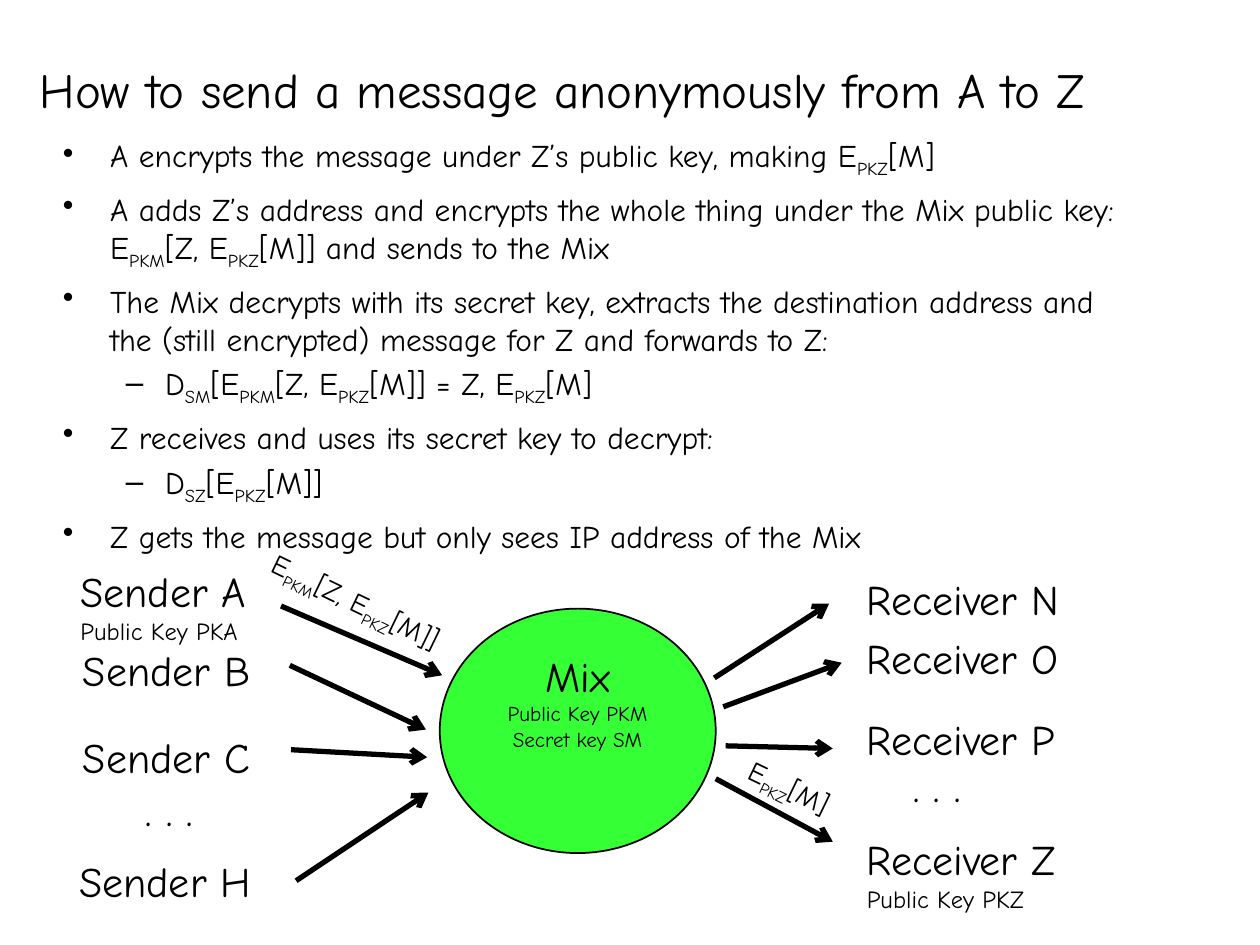
from dataclasses import dataclass

from lxml.etree import SubElement
from pptx import Presentation
from pptx.dml.color import RGBColor as RGB
from pptx.enum.shapes import MSO_CONNECTOR as CONN, MSO_SHAPE as SHAPE
from pptx.enum.text import MSO_ANCHOR as ANCHOR, MSO_AUTO_SIZE as AUTO, PP_ALIGN as ALIGN
from pptx.oxml.ns import qn
from pptx.util import Pt


@dataclass(frozen=True)
class Theme:
    font: str = "Comic Neue"
    ink: RGB = RGB(0x00, 0x00, 0x00)
    mix_fill: RGB = RGB(0x35, 0xFF, 0x35)
    title: int = 28
    body: int = 18
    node: int = 24
    cipher: int = 16
    key: int = 14
    mix_key: int = 12
    outline: float = 1
    arrow: float = 3


@dataclass(frozen=True)
class Level:
    margin: float
    hanging: float
    before: float
    bullet: str


@dataclass(frozen=True)
class Bullet:
    text: str
    level: int = 0


@dataclass(frozen=True)
class Label:
    text: str
    left: float
    top: float
    width: float
    height: float = 36
    size: int = 24
    key: str = ""
    rotation: float = 0
    wrap: bool = False


@dataclass(frozen=True)
class Arrow:
    x1: float
    y1: float
    x2: float
    y2: float


T = Theme()
LEVELS = (Level(27, 27, 6.3, "•"), Level(58.5, 22.5, 4, "–"))

# Text between tildes is set as subscript.
BULLETS = (
    Bullet("A encrypts the message under Z’s public key, making E~PKZ~[M]"),
    Bullet("A adds Z’s address and encrypts the whole thing under the Mix public key: "
           "E~PKM~[Z, E~PKZ~[M]] and sends to the Mix"),
    Bullet("The Mix decrypts with its secret key, extracts the destination address and "
           "the (still encrypted) message for Z and forwards to Z:"),
    Bullet("D~SM~[E~PKM~[Z, E~PKZ~[M]] = Z, E~PKZ~[M]", 1),
    Bullet("Z receives and uses its secret key to decrypt:"),
    Bullet("D~SZ~[E~PKZ~[M]]", 1),
    Bullet("Z gets the message but only sees IP address of the Mix"),
)

RECEIVER_X = 488.2
LABELS = (
    Label("Sender A", 38.9, 319.7, 121.7, 53.3, key="Public Key PKA"),
    Label("Sender B", 40.3, 365, 118.8),
    Label("Sender C", 40.3, 414.7, 118.1),
    Label(". . .", 76.3, 445, 46.8),
    Label("Sender H", 38.2, 485.3, 122.4),
    Label("Receiver N", RECEIVER_X, 324, 157.7, wrap=True),
    Label("Receiver O", RECEIVER_X, 357.8, 139),
    Label("Receiver P", RECEIVER_X, 403.9, 132.5),
    Label(". . .", 514.8, 431.3, 46.8),
    Label("Receiver Z", RECEIVER_X, 473, 136.1, 53.3, key="Public Key PKZ"),
    Label("E~PKM~[Z, E~PKZ~[M]]", 143.3, 334.1, 135.4, 26.6, T.cipher, rotation=25.8),
    Label(" E~PKZ~[M]", 414, 437, 75.6, 26.6, T.cipher, rotation=25.8),
)

ARROWS = (
    Arrow(160.6, 346.3, 252.7, 385.9),
    Arrow(165.6, 380.2, 243.4, 416.9),
    Arrow(166.3, 428.4, 244.1, 432.7),
    Arrow(169.2, 503.3, 244.8, 452.9),
    Arrow(408.2, 387.4, 473.8, 344.9),
    Arrow(413.3, 403.9, 481, 378.7),
    Arrow(414.7, 426.2, 475.9, 427.7),
    Arrow(409, 445, 475.9, 481),
)


def add_runs(p, text: str, size: int) -> None:
    for i, part in enumerate(text.split("~")):
        r = p.add_run()
        r.text = part
        r.font.name = T.font
        r.font.size = Pt(size)
        r.font.color.rgb = T.ink
        if i % 2:
            r.font._element.set("baseline", "-25000")


def add_box(s, left: float, top: float, width: float, height: float, wrap: bool = True):
    sp = s.shapes.add_textbox(Pt(left), Pt(top), Pt(width), Pt(height))
    sp.text_frame.word_wrap = wrap
    return sp


def add_title(s, text: str) -> None:
    tf = add_box(s, 15.8, 23.8, 679, 54).text_frame
    tf.vertical_anchor = ANCHOR.MIDDLE
    add_runs(tf.paragraphs[0], text, T.title)


def add_bullets(s, bullets: tuple[Bullet, ...]) -> None:
    tf = add_box(s, 28.8, 74.2, 617.8, 247.7).text_frame
    for i, bullet in enumerate(bullets):
        p = tf.add_paragraph() if i else tf.paragraphs[0]
        level = LEVELS[bullet.level]
        p.level = bullet.level
        p.space_before = Pt(level.before)
        pPr = p._p.get_or_add_pPr()
        pPr.set("marL", str(Pt(level.margin)))
        pPr.set("indent", str(-Pt(level.hanging)))
        SubElement(pPr, qn("a:buChar"), char=level.bullet)
        add_runs(p, bullet.text, T.body)


def add_mix(s) -> None:
    sp = s.shapes.add_shape(SHAPE.OVAL, Pt(251.3), Pt(347.8), Pt(157.7), Pt(139.7))
    sp.shadow.inherit = False
    sp.fill.solid()
    sp.fill.fore_color.rgb = T.mix_fill
    sp.line.color.rgb = T.ink
    sp.line.width = Pt(T.outline)
    tf = sp.text_frame
    tf.word_wrap = True
    tf.vertical_anchor = ANCHOR.TOP
    add_runs(tf.paragraphs[0], "Mix", T.node)
    add_runs(tf.add_paragraph(), "Public Key PKM Secret key SM", T.mix_key)
    for p in tf.paragraphs:
        p.alignment = ALIGN.CENTER


def add_label(s, label: Label) -> None:
    sp = add_box(s, label.left, label.top, label.width, label.height, label.wrap)
    sp.rotation = label.rotation
    tf = sp.text_frame
    tf.auto_size = AUTO.SHAPE_TO_FIT_TEXT
    add_runs(tf.paragraphs[0], label.text, label.size)
    if label.key:
        add_runs(tf.add_paragraph(), label.key, T.key)


def add_arrow(s, arrow: Arrow) -> None:
    cn = s.shapes.add_connector(CONN.STRAIGHT, Pt(arrow.x1), Pt(arrow.y1), Pt(arrow.x2), Pt(arrow.y2))
    cn.line.color.rgb = T.ink
    cn.line.width = Pt(T.arrow)
    SubElement(cn.line._get_or_add_ln(), qn("a:tailEnd"), type="arrow")
    SubElement(cn._element.spPr, qn("a:effectLst"))


def main() -> None:
    prs = Presentation()
    prs.slide_width, prs.slide_height = Pt(720), Pt(540)
    s = prs.slides.add_slide(prs.slide_layouts[6])
    add_title(s, "How to send a message anonymously from A to Z")
    add_bullets(s, BULLETS)
    add_mix(s)
    for label in LABELS:
        add_label(s, label)
    for arrow in ARROWS:
        add_arrow(s, arrow)
    prs.save("out.pptx")


if __name__ == "__main__":
    main()
